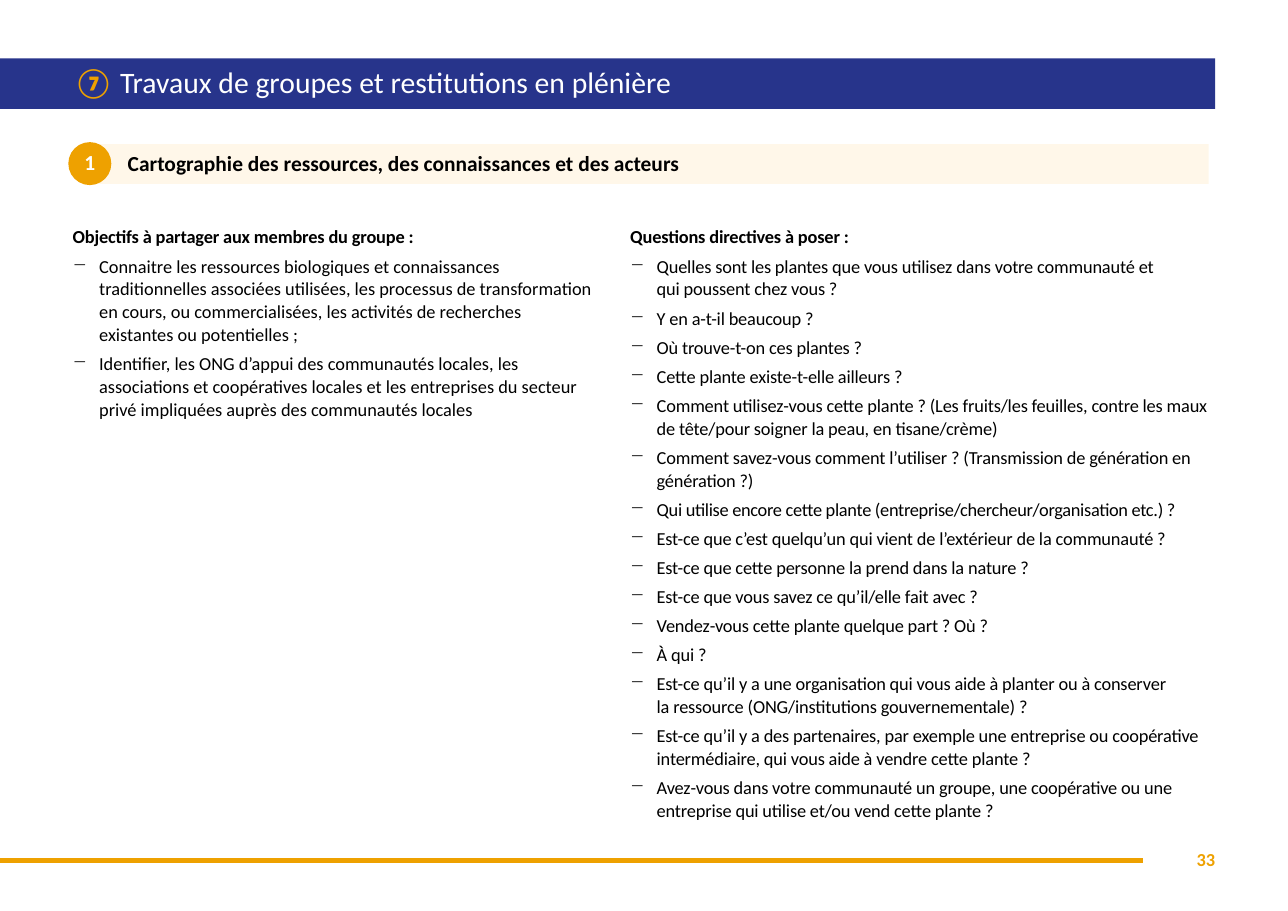
from lxml import etree
from pptx import Presentation
from pptx.dml.color import RGBColor
from pptx.enum.shapes import MSO_CONNECTOR, MSO_SHAPE
from pptx.enum.text import MSO_ANCHOR, PP_ALIGN
from pptx.oxml.ns import qn
from pptx.util import Inches, Pt

RECT, OVAL = MSO_SHAPE.RECTANGLE, MSO_SHAPE.OVAL
LINE = MSO_CONNECTOR.STRAIGHT
MIDDLE, TOP = MSO_ANCHOR.MIDDLE, MSO_ANCHOR.TOP
LEFT, CENTER, RIGHT = PP_ALIGN.LEFT, PP_ALIGN.CENTER, PP_ALIGN.RIGHT

BLUE = RGBColor(0x27, 0x34, 0x8B)
GOLD = RGBColor(0xEE, 0xA1, 0x00)
CREAM = RGBColor(0xFF, 0xED, 0xC9)
BLACK = RGBColor(0, 0, 0)
WHITE = RGBColor(255, 255, 255)

# Each question comes with its letter spacing in points
GOALS = [
    ("Connaitre les ressources biologiques et connaissances traditionnelles associées utilisées, les processus de transformation en cours, ou commercialisées, les activités de recherches existantes ou potentielles ;", 0),
    ("Identifier, les ONG d’appui des communautés locales, les associations et coopératives locales et les entreprises du secteur privé impliquées auprès des communautés locales", 0),
]
ASKS = [
    ("Quelles sont les plantes que vous utilisez dans votre communauté et \nqui poussent chez vous ?", -0.1),
    ("Y en a-t-il beaucoup ?", -0.1),
    ("Où trouve-t-on ces plantes ?", -0.1),
    ("Cette plante existe-t-elle ailleurs ?", -0.1),
    ("Comment utilisez-vous cette plante ? (Les fruits/les feuilles, contre les maux de tête/pour soigner la peau, en tisane/crème)", -0.1),
    ("Comment savez-vous comment l’utiliser ? (Transmission de génération en génération ?)", -0.1),
    ("Qui utilise encore cette plante (entreprise/chercheur/organisation etc.) ?", -0.2),
    ("Est-ce que c’est quelqu’un qui vient de l’extérieur de la communauté ?", -0.1),
    ("Est-ce que cette personne la prend dans la nature ?", -0.1),
    ("Est-ce que vous savez ce qu’il/elle fait avec ?", -0.1),
    ("Vendez-vous cette plante quelque part ? Où ?", -0.1),
    ("À qui ?", -0.1),
    ("Est-ce qu’il y a une organisation qui vous aide à planter ou à conserver \nla ressource (ONG/institutions gouvernementale) ?", -0.1),
    ("Est-ce qu’il y a des partenaires, par exemple une entreprise ou coopérative intermédiaire, qui vous aide à vendre cette plante ?", -0.1),
    ("Avez-vous dans votre communauté un groupe, une coopérative ou une entreprise qui utilise et/ou vend cette plante ?", -0.1),
]


def write(para, text, size=12, color=BLACK, bold=False, track=0,
          align=LEFT, lead=None, after=0):
    """Add text to a paragraph; a newline is a line break."""
    para.alignment = align
    para.line_spacing = lead
    para.space_after = Pt(after)
    for i, part in enumerate(text.split("\n")):
        if i:
            para.add_line_break()
        run = para.add_run()
        run.text = part
        font = run.font
        font.name, font.size, font.bold = "Calibri", Pt(size), bold
        font.color.rgb = color
        if track:
            run._r.get_or_add_rPr().set("spc", str(round(track * 100)))


def frame(shape, pads=(0, 0, 0, 0), anchor=TOP):
    """Set up the text frame and return its first paragraph."""
    body = shape.text_frame
    body.word_wrap = True
    body.vertical_anchor = anchor
    (body.margin_left, body.margin_top,
     body.margin_right, body.margin_bottom) = map(Inches, pads)
    return body.paragraphs[0]


def add_block(slide, kind, box, fill, pads, alpha=None):
    shape = slide.shapes.add_shape(kind, *map(Inches, box))
    shape.shadow.inherit = False
    shape.fill.solid()
    shape.fill.fore_color.rgb = fill
    shape.line.fill.background()
    if alpha:
        tint = shape._element.spPr.find(".//" + qn("a:srgbClr"))
        etree.SubElement(tint, qn("a:alpha")).set("val", str(alpha * 1000))
    return frame(shape, pads, MIDDLE)


def add_text(slide, box):
    return slide.shapes.add_textbox(*map(Inches, box))


def add_rule(slide, y, end):
    rule = slide.shapes.add_connector(LINE, 0, Inches(y), Inches(end), Inches(y))
    rule.line.color.rgb = GOLD
    rule.line.width = Pt(3)
    etree.SubElement(rule._element.spPr, qn("a:effectLst"))


def add_dash(para):
    props = para._p.get_or_add_pPr()
    props.set("marL", str(Inches(0.24)))
    props.set("indent", str(Inches(-0.24)))
    etree.SubElement(props, qn("a:buChar")).set("char", "−")


def add_list(slide, box, head, items):
    shape = add_text(slide, box)
    look = {"lead": Pt(15), "after": 4}
    write(frame(shape), head, bold=True, track=-0.1, **look)
    for text, track in items:
        para = shape.text_frame.add_paragraph()
        para.level = 1
        add_dash(para)
        write(para, text, track=track, **look)


def main():
    deck = Presentation()
    deck.slide_width, deck.slide_height = Inches(11.69), Inches(8.27)
    slide = deck.slides.add_slide(deck.slide_layouts[6])

    # Footer
    page = frame(add_text(slide, (10.29, 7.7, 0.74, 0.2)))
    write(page, "33", color=GOLD, bold=True, align=RIGHT)
    add_rule(slide, 7.81, 10.37)

    # Title band
    title = add_block(slide, RECT, (0, 0.53, 11.03, 0.46), BLUE,
                      (0.67, 0.04, 0.39, 0.04))
    write(title, "⑦", size=19.4, color=GOLD, bold=True, track=-0.1, lead=0.9)
    write(title, " Travaux de groupes et restitutions en plénière",
          size=19.4, color=WHITE, lead=0.9)

    # Numbered heading
    topic = add_block(slide, RECT, (0.81, 1.31, 10.16, 0.36), CREAM,
                      (0.35, 0.04, 0.16, 0.08), alpha=40)
    write(topic, "Cartographie des ressources, des connaissances et des acteurs",
          size=14, bold=True, lead=Pt(18))
    badge = add_block(slide, OVAL, (0.62, 1.29, 0.39, 0.39), GOLD,
                      (0, 0.04, 0, 0.08))
    write(badge, "1", size=14, color=WHITE, bold=True, track=-0.5,
          align=CENTER, lead=Pt(18), after=6)

    # Two columns
    add_list(slide, (0.66, 2.04, 4.72, 5.23),
             "Objectifs à partager aux membres du groupe :", GOALS)
    add_list(slide, (5.72, 2.04, 5.31, 5.46),
             "Questions directives à poser :", ASKS)

    deck.save("out.pptx")


if __name__ == "__main__":
    main()
